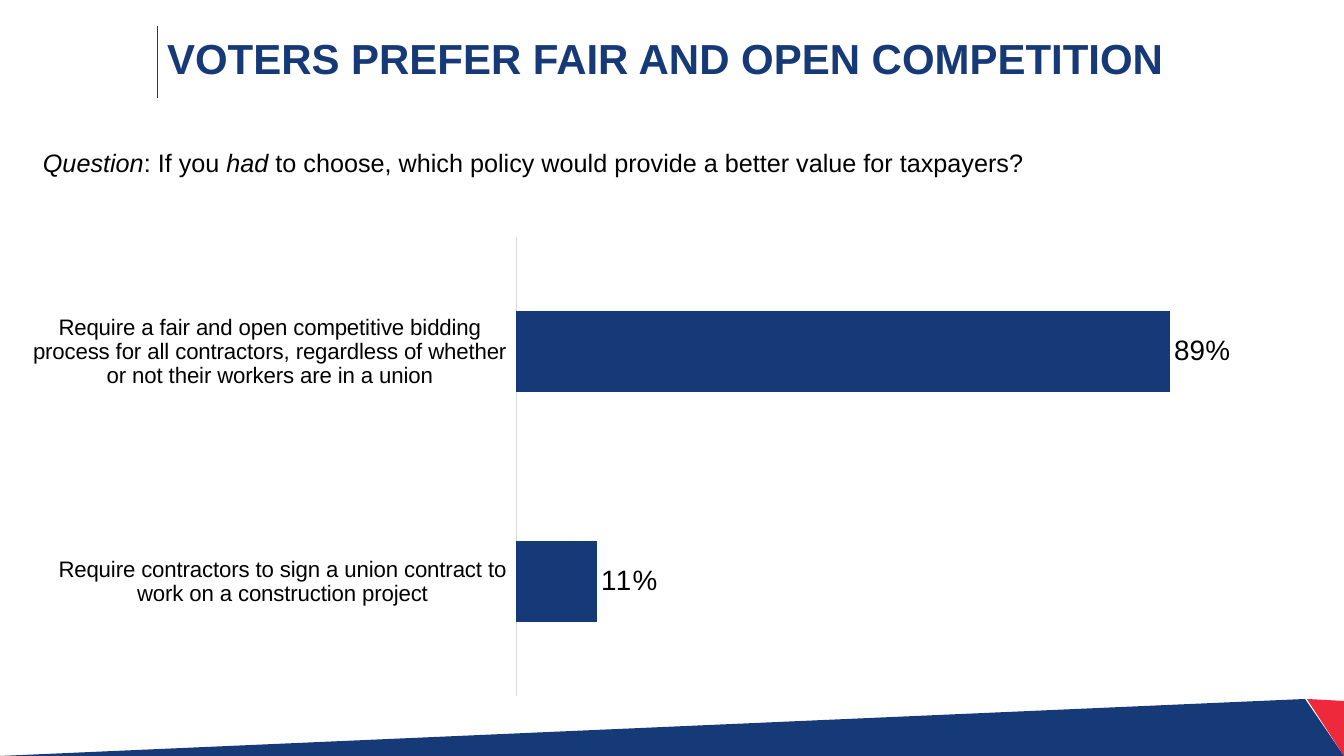
from lxml.etree import SubElement
from pptx import Presentation
from pptx.chart.data import CategoryChartData
from pptx.dml.color import RGBColor
from pptx.enum.chart import XL_CHART_TYPE, XL_LABEL_POSITION, XL_TICK_LABEL_POSITION, XL_TICK_MARK
from pptx.enum.shapes import MSO_CONNECTOR
from pptx.enum.text import MSO_ANCHOR, MSO_AUTO_SIZE, PP_ALIGN
from pptx.oxml import parse_xml
from pptx.oxml.ns import nsdecls, qn
from pptx.util import Pt

PX = 914400 / 100.8
WIDE, HIGH = 1344, 756
NAVY = RGBColor(0x16, 0x3A, 0x78)
RED = RGBColor(0xEE, 0x29, 0x3C)
BLACK = RGBColor(0, 0, 0)
GREY = RGBColor(0xD9, 0xD9, 0xD9)
FACE = "Arial"


def emu(*sizes):
    return [round(size * PX) for size in sizes]


def style(font, size, color=BLACK, bold=False):
    font.name = FACE
    font.size = Pt(size)
    font.bold = bold
    font.color.rgb = color


def add_patch(slide, box, points, color):
    """Draw a filled outline whose points are relative to the box."""
    left, top = box[:2]
    spots = [(left + x, top + y) for x, y in points]
    pen = slide.shapes.build_freeform(*spots[0], scale=PX)
    pen.add_line_segments(spots[1:], close=True)
    patch = pen.convert_to_shape()
    patch.shadow.inherit = False
    patch.fill.solid()
    patch.fill.fore_color.rgb = color
    patch.line.fill.background()


def add_foot(slide, box):
    wide, high = box[2:]
    add_patch(slide, box, [(0, high), (wide - 39, 0), (wide, high)], NAVY)
    add_patch(slide, box, [(wide - 37, 0), (wide, 2), (wide, high)], RED)


def add_title(slide, box, text):
    left, top, wide, high = box
    # Rule at the left edge
    rule = slide.shapes.add_connector(
        MSO_CONNECTOR.STRAIGHT, *emu(left, top - 1, left, top + high + 3))
    rule.line.color.rgb = NAVY
    rule.line.width = Pt(0.5)
    SubElement(rule._element.spPr, qn("a:effectLst"))
    # Heading
    title = slide.shapes.title
    title.left, title.top, title.width, title.height = emu(*box)
    frame = title.text_frame
    frame.text = text
    frame.word_wrap = True
    frame.auto_size = MSO_AUTO_SIZE.NONE
    frame.vertical_anchor = MSO_ANCHOR.MIDDLE
    para = frame.paragraphs[0]
    para.alignment = PP_ALIGN.LEFT
    para.line_spacing = 0.9
    style(para.font, 30, NAVY, True)


def add_query(slide, box, parts):
    frame = slide.shapes.add_textbox(*emu(*box)).text_frame
    frame.word_wrap = True
    frame.auto_size = MSO_AUTO_SIZE.SHAPE_TO_FIT_TEXT
    para = frame.paragraphs[0]
    para.line_spacing = 0.9
    style(para.font, 18)
    for text, slant in parts:
        run = para.add_run()
        run.text = text
        run.font.italic = slant


def add_bars(slide, box, rows):
    data = CategoryChartData(number_format="0%")
    data.categories = [name for name, share in rows]
    data.add_series("Series 1", [share for name, share in rows])
    chart = slide.shapes.add_chart(
        XL_CHART_TYPE.BAR_CLUSTERED, *emu(*box), data).chart
    chart.has_legend = False
    chart.has_title = False
    style(chart.font, 16)

    # Axes
    names = chart.category_axis
    names.major_tick_mark = names.minor_tick_mark = XL_TICK_MARK.NONE
    names.tick_label_position = XL_TICK_LABEL_POSITION.LOW
    names.format.line.color.rgb = GREY
    names.format.line.width = Pt(0.75)
    style(names.tick_labels.font, 16)
    scale = chart.value_axis
    scale.minimum_scale, scale.maximum_scale = 0, 1
    scale.has_major_gridlines = False
    scale.visible = False

    # Bars and their labels
    plot = chart.plots[0]
    plot.gap_width = 182
    plot.vary_by_categories = False
    fill = plot.series[0].format.fill
    fill.solid()
    fill.fore_color.rgb = NAVY
    plot.has_data_labels = True
    labels = plot.data_labels
    labels.show_value = True
    labels.number_format = "0%"
    labels.number_format_is_linked = False
    labels.position = XL_LABEL_POSITION.OUTSIDE_END
    style(labels.font, 20)

    # Fixed inner plot area
    area = chart._chartSpace.chart.plotArea
    for old in area.findall(qn("c:layout")):
        area.remove(old)
    spots = {"x": 0.393, "y": 0.1, "w": 0.607, "h": 0.874}
    modes = "".join(f'<c:{key}Mode val="edge"/>' for key in "xy")
    sizes = "".join(f'<c:{key} val="{part}"/>' for key, part in spots.items())
    area.insert(0, parse_xml(
        f'<c:layout {nsdecls("c")}><c:manualLayout>'
        f'<c:layoutTarget val="inner"/>{modes}{sizes}'
        '</c:manualLayout></c:layout>'))


def main():
    deck = Presentation()
    deck.slide_width, deck.slide_height = emu(WIDE, HIGH)
    slide = deck.slides.add_slide(deck.slide_layouts[5])
    add_foot(slide, (0, HIGH - 57, WIDE, 57))
    add_title(slide, (157, 27, 1127, 68),
              "VOTERS PREFER FAIR AND OPEN COMPETITION")
    add_query(slide, (33, 146, 1251, 37), [
        ("Question", True),
        (": If you ", False),
        ("had ", True),
        ("to choose, which policy would provide a better value for taxpayers?", False),
    ])
    add_bars(slide, (33, 184, 1218, 526), [
        ("Require contractors to sign a union contract to work on a "
         "construction project", 0.11),
        ("Require a fair and open competitive bidding process for all contractors, "
         "regardless of whether or not their workers are in a union", 0.89),
    ])
    deck.save("out.pptx")


if __name__ == "__main__":
    main()
